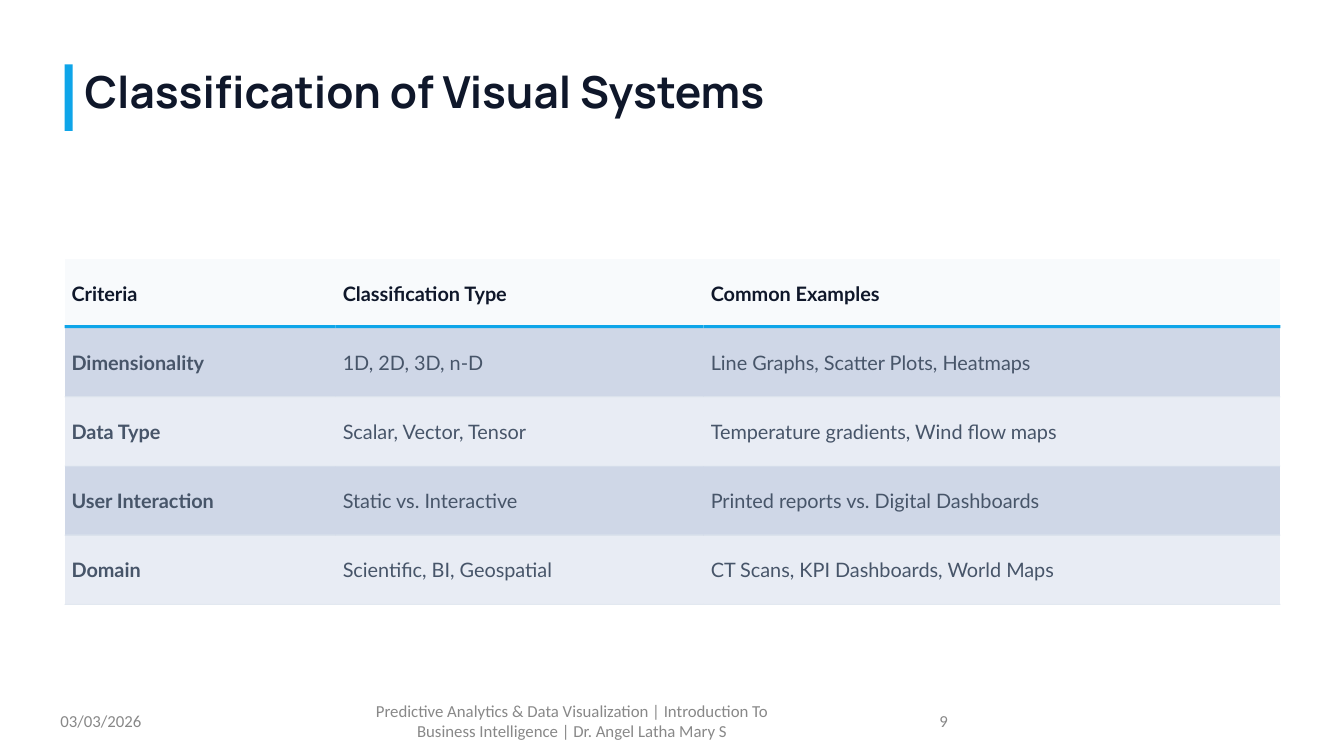
from itertools import accumulate
from pptx import Presentation
from pptx.dml.color import RGBColor
from pptx.enum.shapes import MSO_SHAPE
from pptx.enum.text import MSO_ANCHOR, PP_ALIGN
from pptx.util import Pt

SCALE = 9144  # EMU per px, 100 px to the inch

COLORS = {
    "ink": "0F172A", "body": "475569", "accent": "0EA5E9", "rule": "E2E8F0",
    "header": "F8FAFC", "band_dark": "CFD7E7", "band_light": "E8ECF4",
    "footer": "888888",
}
FORMATS = {
    "title": {"size": Pt(31.5), "name": "Manrope", "bold": True, "color": "ink"},
    "header": {"size": Pt(14.2), "name": "Lato", "bold": True, "color": "ink"},
    "label": {"size": Pt(14.2), "name": "Lato", "bold": True, "color": "body"},
    "cell": {"size": Pt(14.2), "name": "Lato", "bold": False, "color": "body"},
    "footer": {"size": Pt(12), "name": "Calibri", "bold": False, "color": "footer"},
}
NO_STYLE = "{2D5ABB26-0587-4C30-8999-92F81FD0307C}"

ROWS = [
    ("Criteria", "Classification Type", "Common Examples"),
    ("Dimensionality", "1D, 2D, 3D, n-D", "Line Graphs, Scatter Plots, Heatmaps"),
    ("Data Type", "Scalar, Vector, Tensor", "Temperature gradients, Wind flow maps"),
    ("User Interaction", "Static vs. Interactive", "Printed reports vs. Digital Dashboards"),
    ("Domain", "Scientific, BI, Geospatial", "CT Scans, KPI Dashboards, World Maps"),
]
COL_WIDTHS = [269, 365, 572]
FOOTERS = [
    (50, 233, PP_ALIGN.LEFT, "03/03/2026"),
    (342, 451, PP_ALIGN.CENTER,
     "Predictive Analytics & Data Visualization | Introduction To "
     "Business Intelligence | Dr. Angel Latha Mary S"),
    (717, 233, PP_ALIGN.RIGHT, "9"),
]


def px(n):
    return round(n * SCALE)


def rgb(name):
    return RGBColor.from_string(COLORS[name])


def set_margins(obj, x, y):
    for side, n in {"left": x, "right": x, "top": y, "bottom": y}.items():
        setattr(obj, f"margin_{side}", px(n))


def write(tf, text, style, align=PP_ALIGN.LEFT):
    p = tf.paragraphs[0]
    p.alignment = align
    r = p.add_run()
    r.text = text
    for key, value in FORMATS[style].items():
        if key == "color":
            r.font.color.rgb = rgb(value)
        else:
            setattr(r.font, key, value)


def add_bar(s, x, y, w, h, color):
    sp = s.shapes.add_shape(MSO_SHAPE.RECTANGLE, px(x), px(y), px(w), px(h))
    sp.shadow.inherit = False
    sp.fill.solid()
    sp.fill.fore_color.rgb = rgb(color)
    sp.line.fill.background()


def add_title(s, x, y, w, h):
    sp = s.shapes.title
    sp.left, sp.top, sp.width, sp.height = px(x + 20), px(y), px(w - 20), px(h)
    tf = sp.text_frame
    tf.word_wrap = True
    tf.vertical_anchor = MSO_ANCHOR.TOP
    set_margins(tf, 0, 0)
    write(tf, "Classification of Visual Systems", "title")
    add_bar(s, x, y, 8, h, "accent")


def add_criteria_table(s, x, y, h):
    row_h = h / len(ROWS)
    table = s.shapes.add_table(len(ROWS), len(COL_WIDTHS), px(x), px(y),
                               px(sum(COL_WIDTHS)), px(h)).table
    table._tbl.tblPr[0].text = NO_STYLE
    for col, w in zip(table.columns, COL_WIDTHS):
        col.width = px(w)
    lefts = list(accumulate(COL_WIDTHS[:-1], initial=x))

    for i, texts in enumerate(ROWS):
        table.rows[i].height = px(row_h)
        fill = "header" if i == 0 else "band_dark" if i % 2 else "band_light"
        for j, text in enumerate(texts):
            cell = table.cell(i, j)
            cell.vertical_anchor = MSO_ANCHOR.MIDDLE
            set_margins(cell, 7, 3)
            cell.fill.solid()
            cell.fill.fore_color.rgb = rgb(fill)
            style = "header" if i == 0 else "label" if j == 0 else "cell"
            write(cell.text_frame, text, style)

        # Rule along the bottom of the row
        rule_h, color = (3, "accent") if i == 0 else (1, "rule")
        for left, w in zip(lefts, COL_WIDTHS):
            add_bar(s, left, y + (i + 1) * row_h - rule_h, w, rule_h, color)


def add_footer(s, y, h):
    for x, w, align, text in FOOTERS:
        tf = s.shapes.add_textbox(px(x), px(y), px(w), px(h)).text_frame
        tf.word_wrap = True
        tf.vertical_anchor = MSO_ANCHOR.MIDDLE
        set_margins(tf, 10, 5)
        write(tf, text, "footer", align)


def main():
    prs = Presentation()
    prs.slide_width, prs.slide_height = px(1333), px(750)
    s = prs.slides.add_slide(prs.slide_layouts[5])
    add_criteria_table(s, 64, 257, 343)
    add_title(s, 64, 64, 1265, 66)
    add_footer(s, 695, 40)
    prs.save("out.pptx")


if __name__ == "__main__":
    main()
